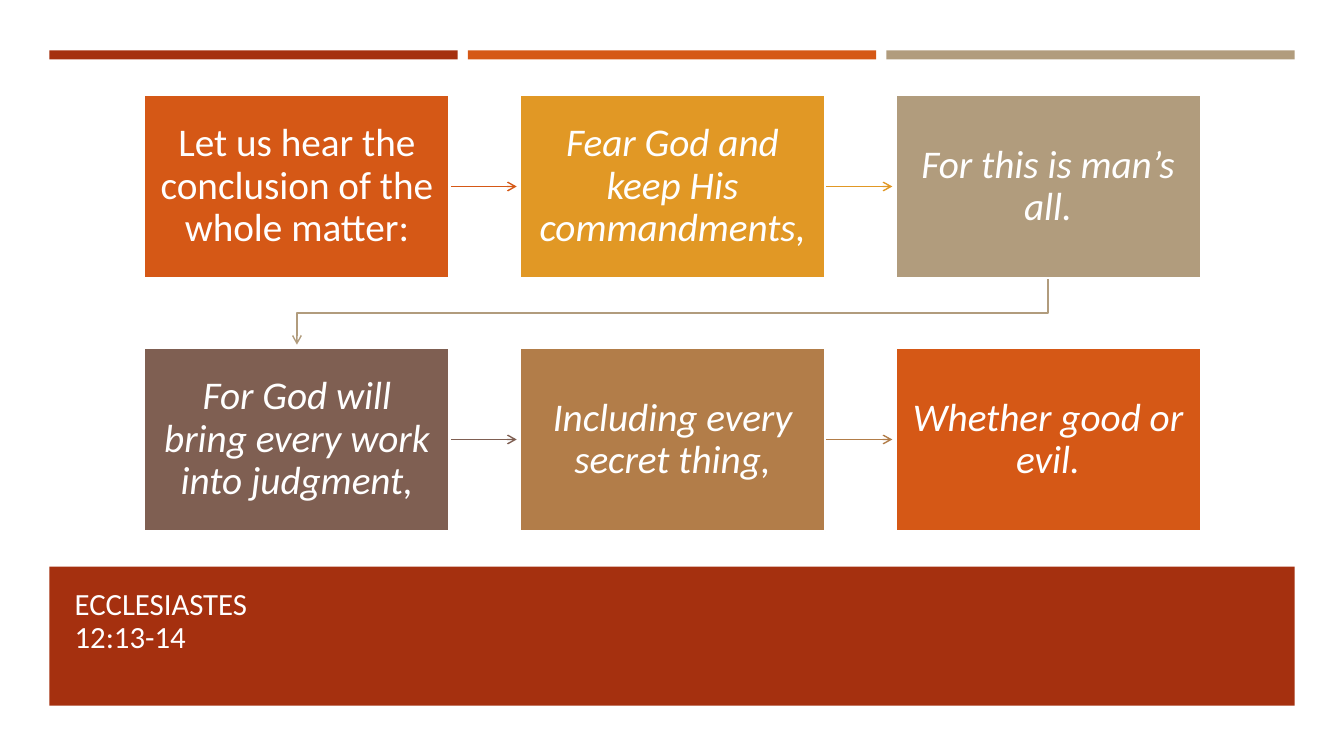
from pptx import Presentation
from pptx.dml.color import RGBColor
from pptx.enum.shapes import MSO_CONNECTOR, MSO_SHAPE
from pptx.enum.text import MSO_ANCHOR, MSO_AUTO_SIZE, PP_ALIGN
from pptx.oxml.ns import qn
from pptx.util import Inches, Pt
from lxml import etree

RECT = MSO_SHAPE.RECTANGLE
STRAIGHT = MSO_CONNECTOR.STRAIGHT
MIDDLE, BOTTOM = MSO_ANCHOR.MIDDLE, MSO_ANCHOR.BOTTOM
NO_FIT = MSO_AUTO_SIZE.NONE
LEFT, CENTER = PP_ALIGN.LEFT, PP_ALIGN.CENTER

WHITE = RGBColor(0xFF, 0xFF, 0xFF)
TITLE_WHITE = RGBColor(0xFF, 0xFE, 0xFF)
RED = RGBColor(0xA5, 0x30, 0x0F)
ORANGE = RGBColor(0xD5, 0x58, 0x16)
GOLD = RGBColor(0xE1, 0x98, 0x25)
TAN = RGBColor(0xB1, 0x9C, 0x7D)
BROWN = RGBColor(0x7F, 0x5F, 0x52)
COPPER = RGBColor(0xB2, 0x7D, 0x49)

STEPS = [
    ("Let us hear the conclusion of the whole matter:", ORANGE, False),
    ("Fear God and keep His commandments,", GOLD, True),
    ("For this is man’s all.", TAN, True),
    ("For God will bring every work into judgment,", BROWN, True),
    ("Including every secret thing,", COPPER, True),
    ("Whether good or evil.", ORANGE, True),
]
COLUMNS = 3
GRID_X, GRID_Y = 1.43, 0.94
PITCH_X, PITCH_Y = 7.45 / 2, 2.51
BOX_W, BOX_H = 3.03, 1.82
ARROW_GAP = 0.03


class SlideBuilder:
    font = "Calibri"

    def __init__(self, prs):
        self.s = prs.slides.add_slide(prs.slide_layouts[5])

    def add_text(self, p, text, size, color, italic=False):
        r = p.add_run()
        r.text = text
        r.font.name = self.font
        r.font.size = Pt(size)
        r.font.color.rgb = color
        r.font.italic = italic

    def rect(self, x, y, w, h, color):
        sp = self.s.shapes.add_shape(RECT, Inches(x), Inches(y), Inches(w), Inches(h))
        sp.shadow.inherit = False
        sp.fill.solid()
        sp.fill.fore_color.rgb = color
        sp.line.fill.background()
        return sp

    def title(self, lines, x, y, w, h):
        sp = self.s.shapes.title
        sp.left, sp.top, sp.width, sp.height = Inches(x), Inches(y), Inches(w), Inches(h)
        sp.element.getparent().append(sp.element)
        tf = sp.text_frame
        tf.auto_size = NO_FIT
        tf.vertical_anchor = BOTTOM
        p = tf.paragraphs[0]
        p.alignment = LEFT
        p.line_spacing = 0.9
        for i, line in enumerate(lines):
            if i:
                p.add_line_break()
            self.add_text(p, line, 22, TITLE_WHITE)

    def step(self, x, y, text, color, italic):
        sp = self.rect(x, y, BOX_W, BOX_H, color)
        sp.line.color.rgb = WHITE
        sp.line.width = Pt(1.75)
        tf = sp.text_frame
        tf.word_wrap = True
        tf.vertical_anchor = MIDDLE
        tf.margin_left = tf.margin_right = Inches(0.15)
        tf.margin_top = tf.margin_bottom = Inches(0.16)
        p = tf.paragraphs[0]
        p.alignment = CENTER
        p.line_spacing = 0.9
        self.add_text(p, text, 28, WHITE, italic)

    def arrow(self, points, color):
        start, *rest = [(Inches(x), Inches(y)) for x, y in points]
        if len(rest) == 1:
            sp = self.s.shapes.add_connector(STRAIGHT, *start, *rest[0])
            etree.SubElement(sp.element.spPr, qn("a:effectLst"))
        else:
            builder = self.s.shapes.build_freeform(*start)
            builder.add_line_segments(rest, close=False)
            sp = builder.convert_to_shape()
            sp.shadow.inherit = False
            sp.fill.background()
        sp.line.color.rgb = color
        sp.line.width = Pt(1)
        ln = sp.element.spPr.find(qn("a:ln"))
        etree.SubElement(ln, qn("a:tailEnd"), type="arrow")


def main():
    prs = Presentation()
    prs.slide_width, prs.slide_height = Inches(13.33), Inches(7.5)
    slide = SlideBuilder(prs)

    for i, color in enumerate([RED, ORANGE, TAN]):
        slide.rect(0.49 + 4.15 * i, 0.5, 4.05, 0.09, color)
    slide.rect(0.49, 5.62, 12.35, 1.38, RED)
    slide.title(["ECCLESIASTES", "12:13-14"], 0.64, 5.76, 12.06, 0.79)

    for i, (text, color, italic) in enumerate(STEPS):
        row, column = divmod(i, COLUMNS)
        x, y = GRID_X + PITCH_X * column, GRID_Y + PITCH_Y * row
        if column < COLUMNS - 1:
            middle = y + BOX_H / 2
            slide.arrow([(x + BOX_W, middle), (x + PITCH_X - ARROW_GAP, middle)], color)
        elif i < len(STEPS) - 1:
            start_x, end_x = x + BOX_W / 2, GRID_X + BOX_W / 2
            bottom, next_top = y + BOX_H, y + PITCH_Y
            turn = (bottom + next_top) / 2
            slide.arrow([(start_x, bottom), (start_x, turn), (end_x, turn),
                         (end_x, next_top - ARROW_GAP)], color)
        slide.step(x, y, text, color, italic)

    prs.save("out.pptx")


if __name__ == "__main__":
    main()
